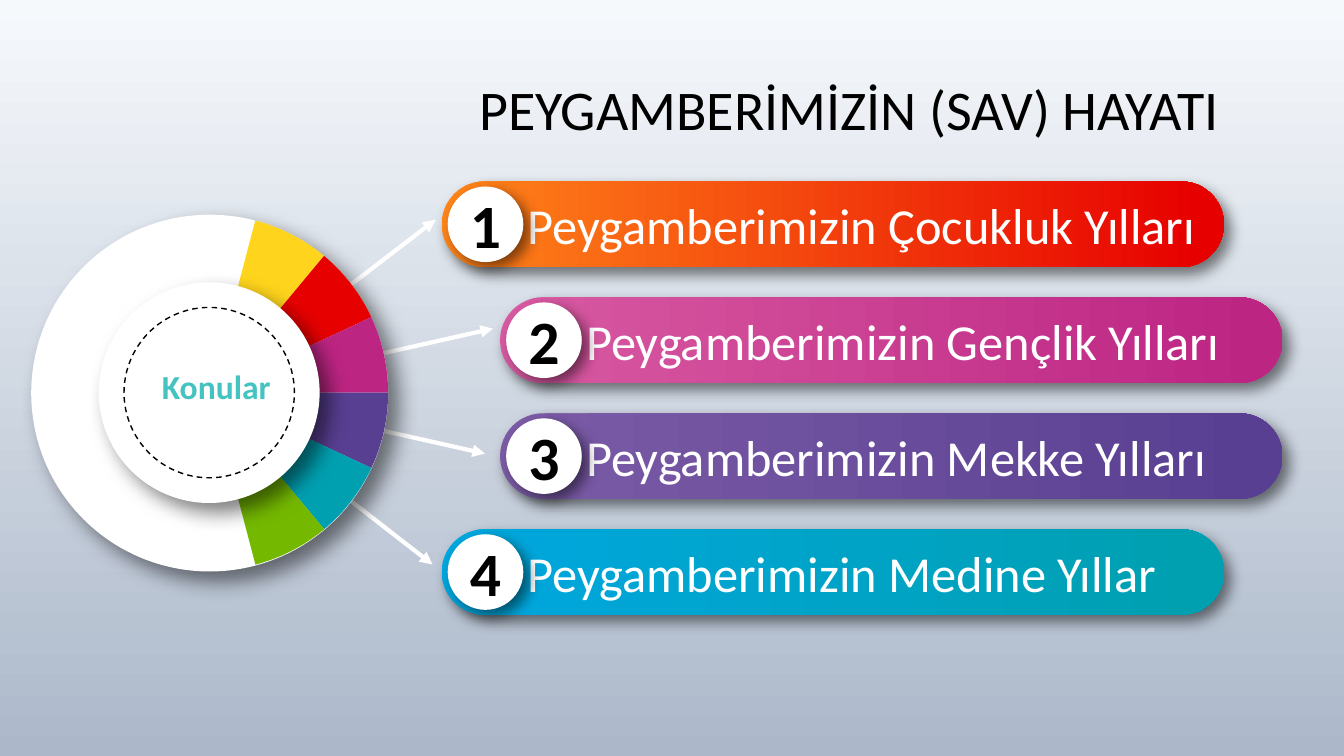
import pptx
import pptx.dml.color
import pptx.enum.dml
import pptx.enum.shapes
import pptx.enum.text
import pptx.oxml
import pptx.oxml.ns
import pptx.util
from pptx.util import Inches

RGB = pptx.dml.color.RGBColor
WHITE = RGB(0xFF, 0xFF, 0xFF)
BLACK = RGB(0x00, 0x00, 0x00)
MINT = RGB(0x44, 0xC3, 0xC0)
PALE = RGB(0xF6, 0xF9, 0xFC)
SLATE = RGB(0xAC, 0xB8, 0xCA)
YELLOW = RGB(0xFE, 0xD4, 0x1C)
ORANGE = RGB(0xFF, 0x85, 0x1A)
RED = RGB(0xE7, 0x00, 0x00)
PINK = RGB(0xD8, 0x5A, 0xA2)
PLUM = RGB(0xBD, 0x25, 0x83)
LILAC = RGB(0x7B, 0x5B, 0xA6)
VIOLET = RGB(0x59, 0x3F, 0x92)
BLUE = RGB(0x00, 0xA7, 0xDF)
TEAL = RGB(0x00, 0xA0, 0xB1)
GREEN = RGB(0x74, 0xB9, 0x00)

KIND = pptx.enum.shapes.MSO_SHAPE
ALIGN = pptx.enum.text.PP_ALIGN
NS = pptx.oxml.ns.nsdecls("a")
qn = pptx.oxml.ns.qn

deck = pptx.Presentation()
deck.slide_width = Inches(13.33)
deck.slide_height = Inches(7.5)
slide = deck.slides.add_slide(deck.slide_layouts[6])
shapes = slide.shapes


def add_form(kind, box, fill=None, blur=0, dist=0):
    form = shapes.add_shape(kind, *map(Inches, box))
    if fill is None:
        form.fill.background()
    else:
        form.fill.solid()
        form.fill.fore_color.rgb = fill
    form.line.fill.background()
    form.shadow.inherit = False
    if blur:
        form._element.spPr.find(qn("a:effectLst")).append(pptx.oxml.parse_xml(
            f'<a:outerShdw {NS} blurRad="{pptx.util.Pt(blur)}" '
            f'dist="{pptx.util.Pt(dist)}" dir="2700000" algn="tl" rotWithShape="0">'
            '<a:srgbClr val="000000"><a:alpha val="50000"/></a:srgbClr></a:outerShdw>'))
    return form


def put_text(form, text, size, tint, bold=False, align=ALIGN.CENTER):
    frame = form.text_frame
    frame.word_wrap = True
    para = frame.paragraphs[0]
    para.alignment = align
    run = para.add_run()
    run.text = text
    run.font.color.rgb = tint
    style = {"name": "Calibri", "size": pptx.util.Pt(size), "bold": bold}
    for key, val in style.items():
        setattr(run.font, key, val)


back = slide.background.fill
back.gradient()
back.gradient_angle = 270
for stop, tint in zip(back.gradient_stops, (PALE, SLATE)):
    stop.color.rgb = tint
back.gradient_stops[0].position = 0
back.gradient_stops[1].position = 1

for x, y in ((4.32, 2.18), (4.89, 3.26), (4.81, 4.5), (4.29, 5.6)):
    arrow = shapes.add_connector(
        pptx.enum.shapes.MSO_CONNECTOR.STRAIGHT,
        Inches(2.09), Inches(3.89), Inches(x), Inches(y))
    arrow.line.color.rgb = WHITE
    arrow.line.width = pptx.util.Pt(3)
    props = arrow._element.spPr
    props.find(qn("a:ln")).append(
        pptx.oxml.parse_xml(f'<a:tailEnd {NS} type="triangle"/>'))
    props.append(pptx.oxml.parse_xml(f"<a:effectLst {NS}/>"))

add_form(KIND.OVAL, (0.31, 2.13, 3.54, 3.54), WHITE, 15, 10)
for i, tint in enumerate((YELLOW, RED, PLUM, VIOLET, TEAL, GREEN)):
    wedge = add_form(KIND.PIE, (0.32, 2.13, 3.53, 3.53), tint)
    wedge.adjustments[0] = 5.33
    wedge.adjustments[1] = 20.39
    wedge.rotation = (275.8 + 25.1 * i) % 360
add_form(KIND.OVAL, (0.98, 2.8, 2.19, 2.19), WHITE, 15, 10)

ring = add_form(KIND.OVAL, (1.23, 3.05, 1.69, 1.69))
ring.line.color.rgb = BLACK
ring.line.width = pptx.util.Pt(1)
ring.line.dash_style = pptx.enum.dml.MSO_LINE.DASH

hub = shapes.add_textbox(*map(Inches, (1.14, 3.58, 2.01, 0.5)))
put_text(hub, "Konular", 24, MINT, True)

topics = (
    (4.38, "Peygamberimizin Çocukluk Yılları", ORANGE, RED),
    (4.96, "Peygamberimizin Gençlik Yılları", PINK, PLUM),
    (4.96, "Peygamberimizin Mekke Yılları", LILAC, VIOLET),
    (4.38, "Peygamberimizin Medine Yıllar", BLUE, TEAL),
)
for i, (x, text, start, end) in enumerate(topics):
    y = 1.8 + 1.15 * i
    bar = add_form(KIND.ROUNDED_RECTANGLE, (x, y, 7.76, 0.85), end, 10, 6)
    bar.adjustments[0] = 0.5
    bar.fill.gradient()
    bar.fill.gradient_angle = 0
    for stop, tint, pos in zip(bar.fill.gradient_stops, (start, end), (0, 0.97)):
        stop.color.rgb = tint
        stop.position = pos
    put_text(bar, text, 36, WHITE, align=ALIGN.LEFT)
    bar.text_frame.margin_left = Inches(0.73)
    bar.text_frame.margin_right = 0
    disc = add_form(KIND.OVAL, (x + 0.06, y + 0.05, 0.75, 0.75), WHITE, 10, 6)
    put_text(disc, str(i + 1), 44, BLACK, True)

title = shapes.add_textbox(*map(Inches, (4.11, 0.69, 8.62, 0.77)))
put_text(title, "PEYGAMBERİMİZİN (SAV) HAYATI", 40, BLACK)

deck.save("out.pptx")
